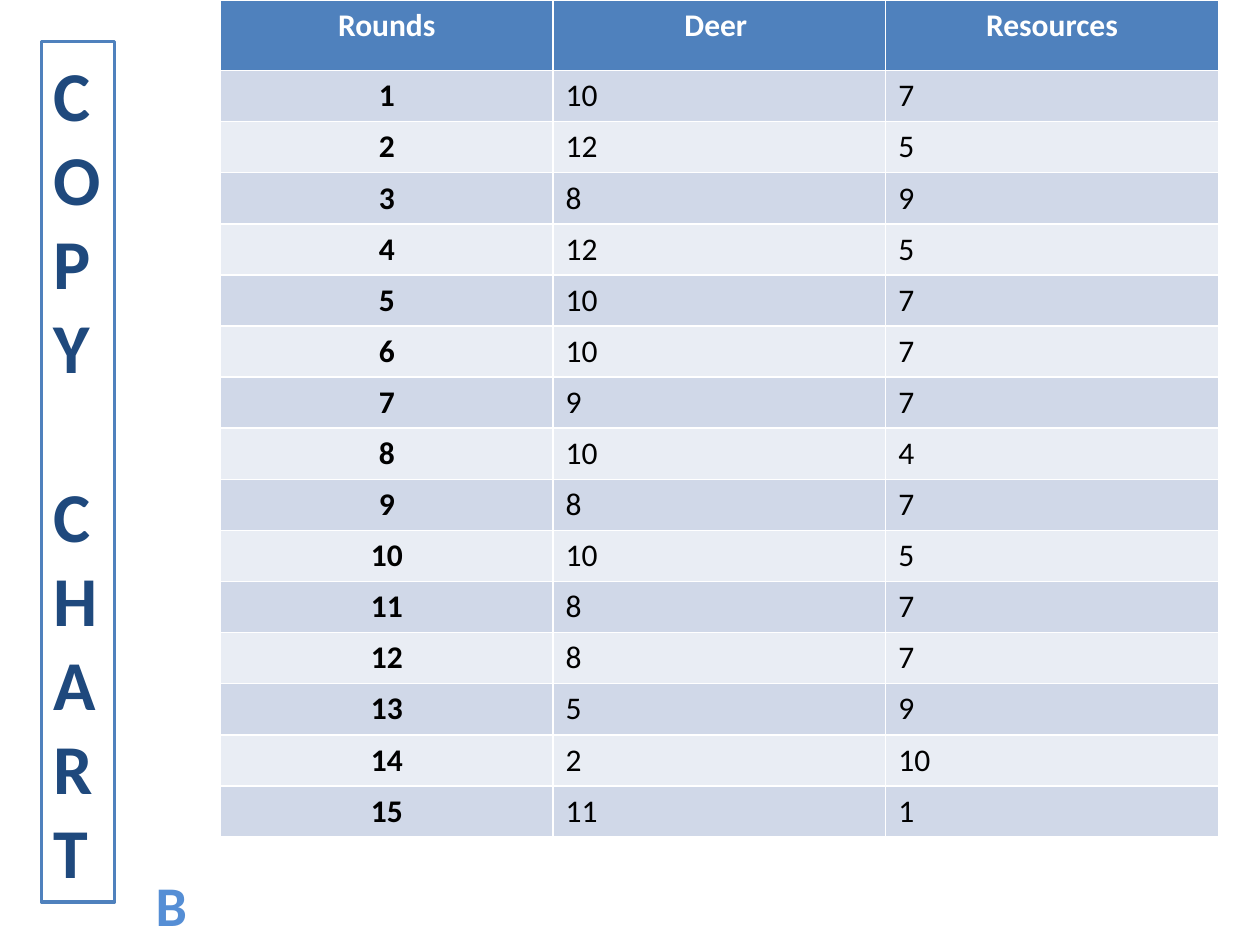
from pptx import Presentation
from pptx.dml.color import RGBColor
from pptx.enum.text import MSO_ANCHOR, MSO_AUTO_SIZE, PP_ALIGN
from pptx.enum.shapes import MSO_SHAPE
from pptx.util import Inches, Pt

CENTER, LEFT = PP_ALIGN.CENTER, PP_ALIGN.LEFT
MIDDLE = MSO_ANCHOR.MIDDLE
GROW = MSO_AUTO_SIZE.SHAPE_TO_FIT_TEXT
RECT = MSO_SHAPE.RECTANGLE

WHITE = RGBColor(0xFF, 0xFF, 0xFF)
BLACK = RGBColor(0x00, 0x00, 0x00)
BLUE = RGBColor(0x4F, 0x81, 0xBD)
NAVY = RGBColor(0x1F, 0x49, 0x7D)
SKY = RGBColor(0x55, 0x8E, 0xD5)
BANDS = (RGBColor(0xE9, 0xED, 0xF4), RGBColor(0xD0, 0xD8, 0xE8))

HEADS = ("Rounds", "Deer ", "Resources")
DEER = (10, 12, 8, 12, 10, 10, 9, 10, 8, 10, 8, 8, 5, 2, 11)
STOCK = (7, 5, 9, 5, 7, 7, 7, 4, 7, 5, 7, 7, 9, 10, 1)
WORDS = ("COPY", "CHART")


def add_run(para, text, size, color, bold=True, align=LEFT):
    """Add one styled run to a paragraph."""
    para.alignment = align
    run = para.add_run()
    run.text = text
    font = run.font
    font.name, font.size, font.bold = "Calibri", Pt(size), bold
    font.color.rgb = color


def add_counts(slide, left, top, width, height):
    """Place the table of deer and resources for each round."""
    rows = [HEADS, *zip(range(1, len(DEER) + 1), DEER, STOCK)]
    table = slide.shapes.add_table(
        len(rows), len(HEADS), left, top, width, height).table
    head = Inches(0.56)
    for col in table.columns:
        col.width = width // len(HEADS)
    for i, row in enumerate(rows):
        table.rows[i].height = (height - head) // len(DEER) if i else head
        for j, value in enumerate(row):
            cell = table.cell(i, j)
            cell.fill.solid()
            cell.fill.fore_color.rgb = BANDS[i % 2] if i else BLUE
            key = i == 0 or j == 0
            add_run(cell.text_frame.paragraphs[0], str(value), 18,
                    BLACK if i else WHITE, key, CENTER if key else LEFT)


def add_banner(slide, left, top, width, height):
    """Place the framed heading, one letter to a line."""
    box = slide.shapes.add_shape(RECT, left, top, width, height)
    box.shadow.inherit = False
    box.fill.solid()
    box.fill.fore_color.rgb = WHITE
    box.line.color.rgb = BLUE
    box.line.width = Pt(2)
    frame = box.text_frame
    frame.word_wrap = False
    frame.auto_size = GROW
    frame.vertical_anchor = MIDDLE
    para = frame.paragraphs[0]
    for n, word in enumerate(WORDS):
        for k, letter in enumerate(word):
            if n or k:
                para = frame.add_paragraph()
            if n and not k:
                para.space_before = Pt(48.8)
            add_run(para, letter, 40, NAVY)


def add_mark(slide, left, top, width, height):
    """Place the letter at the foot of the slide."""
    frame = slide.shapes.add_textbox(left, top, width, height).text_frame
    frame.word_wrap = True
    frame.auto_size = GROW
    add_run(frame.paragraphs[0], "B", 32, SKY, align=CENTER)


def main():
    """Build and save the slide."""
    deck = Presentation()
    deck.slide_width, deck.slide_height = Inches(10), Inches(7.5)
    slide = deck.slides.add_slide(deck.slide_layouts[6])
    add_counts(slide, Inches(1.75), Inches(0), Inches(7.92), Inches(6.6))
    add_banner(slide, Inches(0.33), Inches(0.33), Inches(0.58), Inches(6.83))
    add_mark(slide, Inches(0.92), Inches(6.86), Inches(0.88), Inches(0.64))
    deck.save("out.pptx")


if __name__ == "__main__":
    main()
